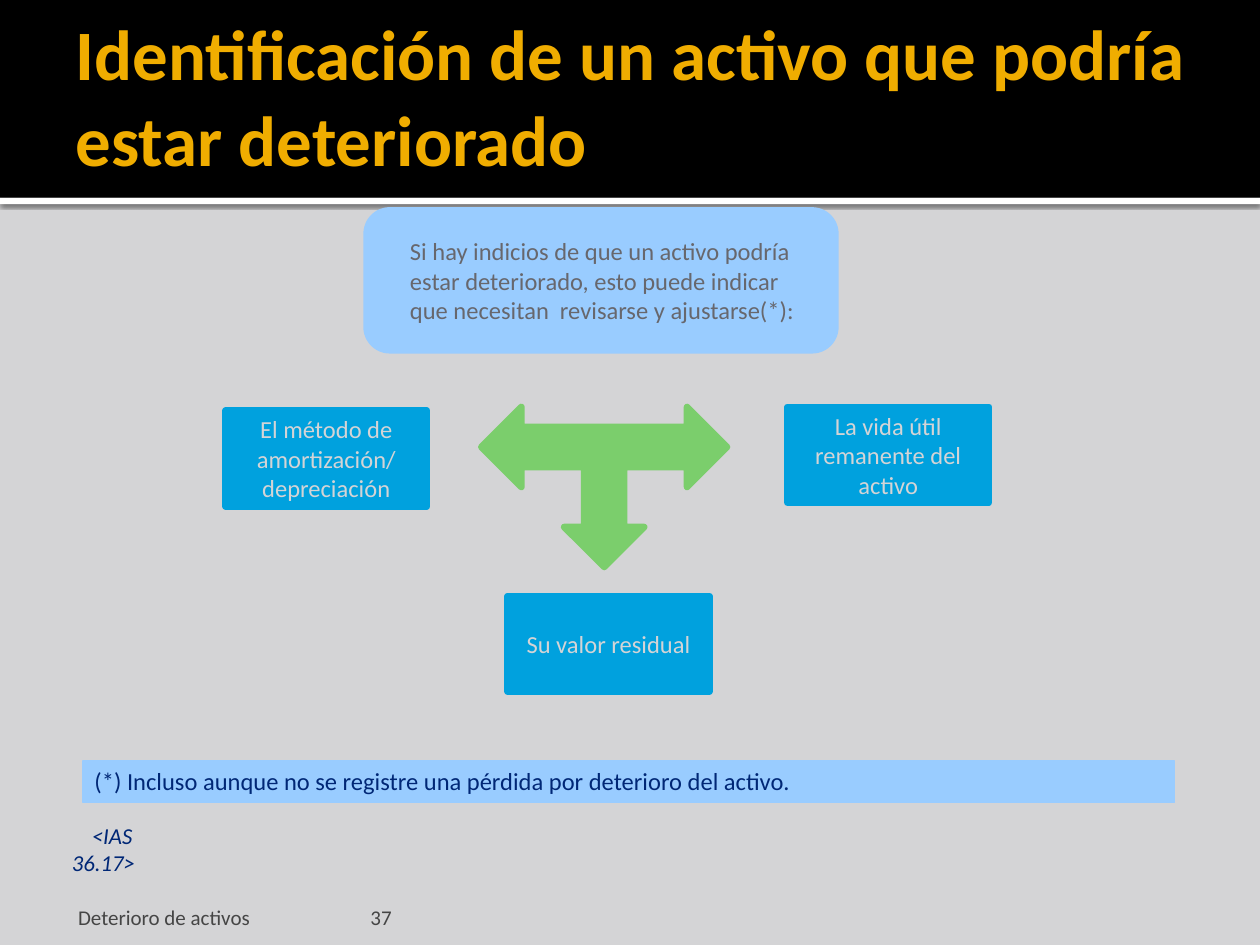
from lxml.etree import SubElement
from pptx import Presentation
from pptx.dml.color import RGBColor
from pptx.enum.shapes import MSO_SHAPE
from pptx.enum.text import MSO_ANCHOR, PP_ALIGN
from pptx.oxml.ns import qn
from pptx.util import Inches, Pt

BLUE, SKY, GREEN = "00A1DE", "99CCFF", "7BCE6C"
NAVY, GREY, PALE = "002776", "454545", "D4D4D6"
PADS = (0.09, 0.04, 0.09, 0.04)


def hue(code):
    return RGBColor.from_string(code)


def apply(item, values):
    for name, value in values.items():
        setattr(item, name, value)


class Deck:
    """Holds the shared style and the current slide."""

    font = "Calibri"
    edge = 3.78

    def __init__(self):
        self.prs = Presentation()
        apply(self.prs, {"slide_width": Inches(10), "slide_height": Inches(7.5)})
        self.slide = self.prs.slides.add_slide(self.prs.slide_layouts[5])
        fill = self.slide.background.fill
        fill.solid()
        fill.fore_color.rgb = hue(PALE)

    def label(self, shape, lines, size, color, align=PP_ALIGN.LEFT,
              anchor=MSO_ANCHOR.MIDDLE, pads=PADS, **style):
        frame = shape.text_frame
        sides = ("left", "top", "right", "bottom")
        apply(frame, {f"margin_{s}": Inches(p) for s, p in zip(sides, pads)})
        apply(frame, {"text": lines, "word_wrap": True, "vertical_anchor": anchor})
        look = {"name": self.font, "size": Pt(size), **style}
        for para in frame.paragraphs:
            para.alignment = align
            for run in para.runs:
                apply(run.font, look)
                run.font.color.rgb = hue(color)
        return frame

    def shape(self, kind, box, color, edge=None):
        item = self.slide.shapes.add_shape(kind, *map(Inches, box))
        item.shadow.inherit = False
        item.fill.solid()
        item.fill.fore_color.rgb = hue(color)
        if edge:
            item.line.color.rgb = hue(color)
            item.line.width = Pt(edge)
        else:
            item.line.fill.background()
        return item

    def text(self, box, lines, size, color, **style):
        item = self.slide.shapes.add_textbox(*map(Inches, box))
        return self.label(item, lines, size, color, **style)

    def title(self, box, lines, size, color, **style):
        item = self.slide.shapes.title
        names = ("left", "top", "width", "height")
        apply(item, dict(zip(names, map(Inches, box))))
        self.label(item, lines, size, color, **style)
        # Bring the title in front of the header band
        item.element.getparent().append(item.element)

    def shade(self, item):
        glow = item.element.spPr.find(qn("a:effectLst"))
        cast = SubElement(glow, qn("a:outerShdw"), blurRad=str(Pt(2.5)),
                          dist=str(Pt(0.8)), dir="5400000", rotWithShape="0")
        tone = SubElement(cast, qn("a:srgbClr"), val="000000")
        SubElement(tone, qn("a:alpha"), val="60000")

    def indent(self, para, left=0, first=0):
        props = para._p.get_or_add_pPr()
        props.set("marL", str(Inches(left)))
        props.set("indent", str(Inches(first)))


def main():
    deck = Deck()

    # Header band
    deck.shade(deck.shape(MSO_SHAPE.RECTANGLE, (0, 1.57, 10, 0.05), "FFFFFF"))
    deck.shape(MSO_SHAPE.RECTANGLE, (0, 0, 10, 1.57), "000000")

    # Footer
    for left, width, pad, words in ((2.89, 6.02, 0.05, "37"),
                                    (0.5, 2.33, 0.12, "Deterioro de activos")):
        deck.text((left, 7.08, width, 0.3), words, 12, GREY,
                  anchor=MSO_ANCHOR.BOTTOM, pads=(pad, 0.04, 0.05, 0))

    # Three-way arrow, pointing down
    arrow = deck.shape(MSO_SHAPE.LEFT_RIGHT_UP_ARROW, (3.82, 3.23, 1.95, 1.27),
                       GREEN, deck.edge)
    arrow.rotation = 180

    # Premise
    premise = deck.shape(MSO_SHAPE.ROUNDED_RECTANGLE, (2.91, 1.67, 3.72, 1.11),
                         SKY, deck.edge)
    frame = deck.label(premise, "Si hay indicios de que un activo podría estar "
                       "deteriorado, esto puede indicar que necesitan  revisarse "
                       "y ajustarse(*):", 14, "67676D")
    frame.paragraphs[0].space_after = Pt(2.7)
    deck.indent(frame.paragraphs[0], left=0.2)

    # Items to review
    for left, top, words in (
            (1.79, 3.26, "El método de amortización/\ndepreciación"),
            (6.25, 3.23, "La vida útil remanente del activo"),
            (4.03, 4.73, "Su valor residual")):
        item = deck.shape(MSO_SHAPE.RECTANGLE, (left, top, 1.6, 0.76),
                          BLUE, deck.edge)
        deck.label(item, words, 14, PALE, align=PP_ALIGN.CENTER)

    # Footnote and reference
    note = deck.shape(MSO_SHAPE.RECTANGLE, (0.66, 6.04, 8.66, 0.33), SKY, 0.75)
    deck.label(note, "(*) Incluso aunque no se registre una pérdida por "
               "deterioro del activo.", 14, NAVY, anchor=MSO_ANCHOR.TOP)
    frame = deck.text((0.48, 6.48, 1.19, 0.31), "<IAS 36.17>", 13, NAVY,
                      anchor=MSO_ANCHOR.TOP, pads=(0.09, 0.04, 0.3, 0.04),
                      italic=True)
    deck.indent(frame.paragraphs[0], first=0.16)

    # Title
    deck.title((0.5, 0.17, 9, 1.37),
               "Identificación de un activo que podría estar deteriorado",
               40.5, "F0AD00", pads=(0.1, 0.04, 0.05, 0.24), bold=True)

    deck.prs.save("out.pptx")


if __name__ == "__main__":
    main()
